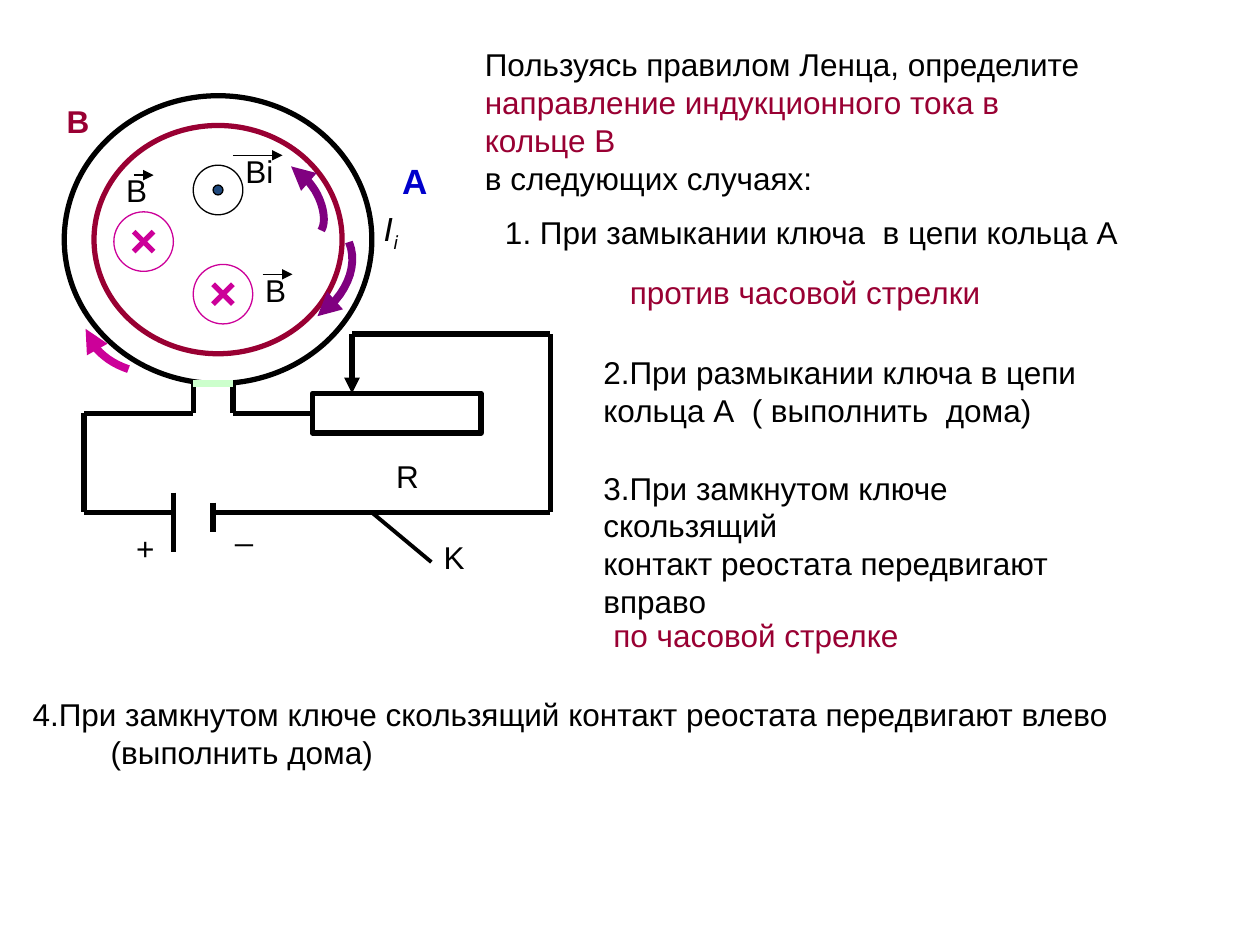
from lxml.etree import SubElement
from pptx import Presentation
from pptx.dml.color import RGBColor
from pptx.enum.shapes import MSO_CONNECTOR, MSO_SHAPE
from pptx.enum.text import MSO_AUTO_SIZE
from pptx.oxml.ns import qn
from pptx.util import Inches, Pt

BLACK = RGBColor(0x00, 0x00, 0x00)
CRIMSON = RGBColor(0x99, 0x00, 0x33)
BLUE = RGBColor(0x00, 0x00, 0xCC)
MAGENTA = RGBColor(0xCC, 0x00, 0x99)
PURPLE = RGBColor(0x80, 0x00, 0x80)
MINT = RGBColor(0xCC, 0xFF, 0xCC)
NAVY = RGBColor(0x1F, 0x49, 0x7D)

THIN, WIRE, BOLD = 0.75, 3, 4.5


class Grid:
    """Square cells measured from a top left corner, in inches."""

    def __init__(self, left, top, cell):
        self.left, self.top, self.cell = left, top, cell

    def point(self, col, row):
        return (Inches(self.left + col * self.cell),
                Inches(self.top + row * self.cell))

    def box(self, col, row, cols, rows):
        return (*self.point(col, row),
                Inches(cols * self.cell), Inches(rows * self.cell))


def style_line(shape, color, width, arrow=False):
    shape.line.color.rgb = color
    shape.line.width = Pt(width)
    if arrow:
        SubElement(shape.line._get_or_add_ln(), qn("a:tailEnd"), type="triangle")


def add_line(page, grid, start, end, color=BLACK, width=WIRE, arrow=False):
    line = page.shapes.add_connector(
        MSO_CONNECTOR.STRAIGHT, *grid.point(*start), *grid.point(*end))
    style_line(line, color, width, arrow)
    SubElement(line._element.spPr, qn("a:effectLst"))
    return line


def add_outline(page, grid, kind, box, color=BLACK, width=WIRE, fill=None):
    shape = page.shapes.add_shape(kind, *grid.box(*box))
    shape.shadow.inherit = False
    if fill is None:
        shape.fill.background()
    else:
        shape.fill.solid()
        shape.fill.fore_color.rgb = fill
    style_line(shape, color, width)
    return shape


def add_curve(page, grid, start, pieces, color, steps=12):
    """Arrow along a chain of cubic pieces (control, control, end)."""
    points = [start]
    for one, two, end in pieces:
        first = points[-1]
        for step in range(1, steps + 1):
            t = step / steps
            u = 1 - t
            points.append(tuple(
                u**3 * a + 3 * u * u * t * b + 3 * u * t * t * c + t**3 * d
                for a, b, c, d in zip(first, one, two, end)))
    builder = page.shapes.build_freeform(*grid.point(*points[0]), scale=1.0)
    builder.add_line_segments([grid.point(*p) for p in points[1:]], close=False)
    curve = builder.convert_to_shape()
    curve.shadow.inherit = False
    curve.fill.background()
    style_line(curve, color, BOLD, arrow=True)


def add_text(page, grid, box, lines, wrap=True, size=18, bold=False,
             indents=()):
    """Each line is a (text, colour) pair and becomes one paragraph."""
    shape = page.shapes.add_textbox(*grid.box(*box))
    frame = shape.text_frame
    frame.word_wrap = wrap
    frame.auto_size = MSO_AUTO_SIZE.SHAPE_TO_FIT_TEXT
    for index, (text, color) in enumerate(lines):
        para = frame.add_paragraph() if index else frame.paragraphs[0]
        if index < len(indents):
            para._p.get_or_add_pPr().set("marL", str(Inches(indents[index])))
        add_span(para, text, color, size, bold)
    return frame


def add_span(para, text, color=BLACK, size=18, bold=False, italic=False,
             name="Arial"):
    span = para.add_run()
    span.text = text
    font = span.font
    font.name, font.size = name, Pt(size)
    font.bold, font.italic = bold, italic
    font.color.rgb = color
    return span


def draw_circuit(page, grid):
    # Wires, as corner points of each run
    for corners in (
        [(6.5, 14.5), (6.5, 16), (1, 16), (1, 21), (5.5, 21)],
        [(8.5, 14.5), (8.5, 16)],
        [(7.5, 21), (24.5, 21), (24.5, 12), (14.5, 12)],
    ):
        for start, end in zip(corners, corners[1:]):
            add_line(page, grid, start, end)
    # Rheostat with its sliding contact
    rheostat = add_outline(page, grid, MSO_SHAPE.RECTANGLE, (12.5, 15, 8.5, 2))
    add_line(page, grid, (8.5, 16), (12.5, 16)).end_connect(rheostat, 1)
    add_line(page, grid, (14.5, 12), (14.5, 15), arrow=True)
    # Battery plates and key
    add_line(page, grid, (5.5, 20), (5.5, 23))
    add_line(page, grid, (7.5, 20.5), (7.5, 22))
    add_line(page, grid, (15.5, 21), (18.5, 23.5), width=2.25)
    # Labels
    for text, col, row, cols in (("+", 3, 21.5, 2), ("_", 8, 20.5, 2),
                                 ("R", 16.1, 17.9, 2.9), ("K", 18.5, 22, 2.5)):
        add_text(page, grid, (col, row, cols, 2.5), [(text, BLACK)])


def draw_field_into_page(page, grid, col, row):
    add_outline(page, grid, MSO_SHAPE.OVAL, (col, row, 3, 3), MAGENTA, THIN)
    near, far = 1, 2
    for rise, fall in ((near, far), (far, near)):
        add_line(page, grid, (col + near, row + rise), (col + far, row + fall),
                 MAGENTA)


def draw_rings(page, grid):
    # Inner ring B, outer ring A and the gap in A
    add_outline(page, grid, MSO_SHAPE.OVAL, (1.5, 1.5, 12.5, 11.5), CRIMSON)
    add_outline(page, grid, MSO_SHAPE.OVAL, (0, 0, 15.5, 14.5))
    add_line(page, grid, (6.5, 14.5), (8.5, 14.5), MINT, BOLD)
    # Field directions
    draw_field_into_page(page, grid, 6.5, 8.5)
    draw_field_into_page(page, grid, 2.5, 5.85)
    add_outline(page, grid, MSO_SHAPE.OVAL, (6.5, 3.5, 2.5, 2.5), width=THIN)
    add_outline(page, grid, MSO_SHAPE.OVAL, (7.5, 4.5, 0.5, 0.5), width=THIN,
                fill=NAVY)
    # Field labels, each with a vector arrow above
    for text, box, start, length in (
        ("B", (2.5, 3.5, 2.5, 2.5), (3.5, 4), 1),
        ("B", (9.5, 8.5, 2.35, 2.5), (10, 9), 1.5),
        ("Bi", (8.5, 2.5, 3.5, 2.5), (8.5, 3), 2.5),
    ):
        add_text(page, grid, box, [(text, BLACK)])
        add_line(page, grid, start, (start[0] + length, start[1]), width=THIN,
                 arrow=True)
    # Current directions
    add_curve(page, grid, (3.24, 13.78),
              [((2.1, 13.4), (1.33, 12.63), (1.08, 11.75))], MAGENTA)
    add_curve(page, grid, (12.95, 6.79),
              [((13.21, 6.35), (13.08, 5.52), (12.63, 4.76)),
               ((12.25, 4.19), (11.81, 3.75), (11.43, 3.56))], PURPLE)
    add_curve(page, grid, (14.35, 7.37),
              [((14.86, 8.63), (14.16, 10.16), (12.76, 11.11))], PURPLE)
    # Ring names and the induced current
    add_text(page, grid, (16.4, 2.9, 2.5, 2.75), [("A", BLUE)], False, 20, True)
    add_text(page, grid, (-0.5, 0, 2.4, 2.5), [("B", CRIMSON)], False, bold=True)
    para = add_text(page, grid, (15.5, 5.45, 2.6, 2.5), []).paragraphs[0]
    add_span(para, "I", italic=True, name="DejaVu Sans")
    index = add_span(para, "i", italic=True, name="DejaVu Sans")
    index.font._element.set("baseline", "-25000")


def write_tasks(page, grid):
    add_text(page, grid, (37.5, 3.1, 51.6, 13.1), [
        ("Пользуясь правилом Ленца, определите", BLACK),
        ("направление индукционного тока в  кольце В", CRIMSON),
        ("в следующих случаях:", BLACK)])
    add_text(page, grid, (39.1, 16.4, 50.7, 4),
             [("1. При замыкании ключа  в цепи кольца А", BLACK)], False)
    add_text(page, grid, (49, 21.2, 30, 4),
             [("против часовой стрелки", CRIMSON)], False)
    add_text(page, grid, (46.9, 27.5, 42.2, 7.1), [
        ("2.При размыкании ключа в цепи кольца А  ( выполнить  дома)", BLACK)])
    add_text(page, grid, (46.9, 36.7, 40.9, 13.1), [
        ("3.При замкнутом ключе скользящий", BLACK),
        ("контакт реостата передвигают вправо", BLACK)])
    add_text(page, grid, (47.7, 48.4, 24.7, 4),
             [("по часовой стрелке", CRIMSON)])
    add_text(page, grid, (1.6, 54.7, 87.8, 7), [
        ("4.При замкнутом ключе скользящий контакт реостата передвигают влево",
         BLACK),
        ("(выполнить дома)", BLACK)], False, indents=(0, 0.62))


def main():
    deck = Presentation()
    deck.slide_width, deck.slide_height = Inches(10), Inches(7.5)
    page = deck.slides.add_slide(deck.slide_layouts[6])
    diagram = Grid(0.51, 0.76, 0.1575)
    draw_circuit(page, diagram)
    draw_rings(page, diagram)
    write_tasks(page, Grid(0, 0, 0.1))
    deck.save("out.pptx")


if __name__ == "__main__":
    main()
